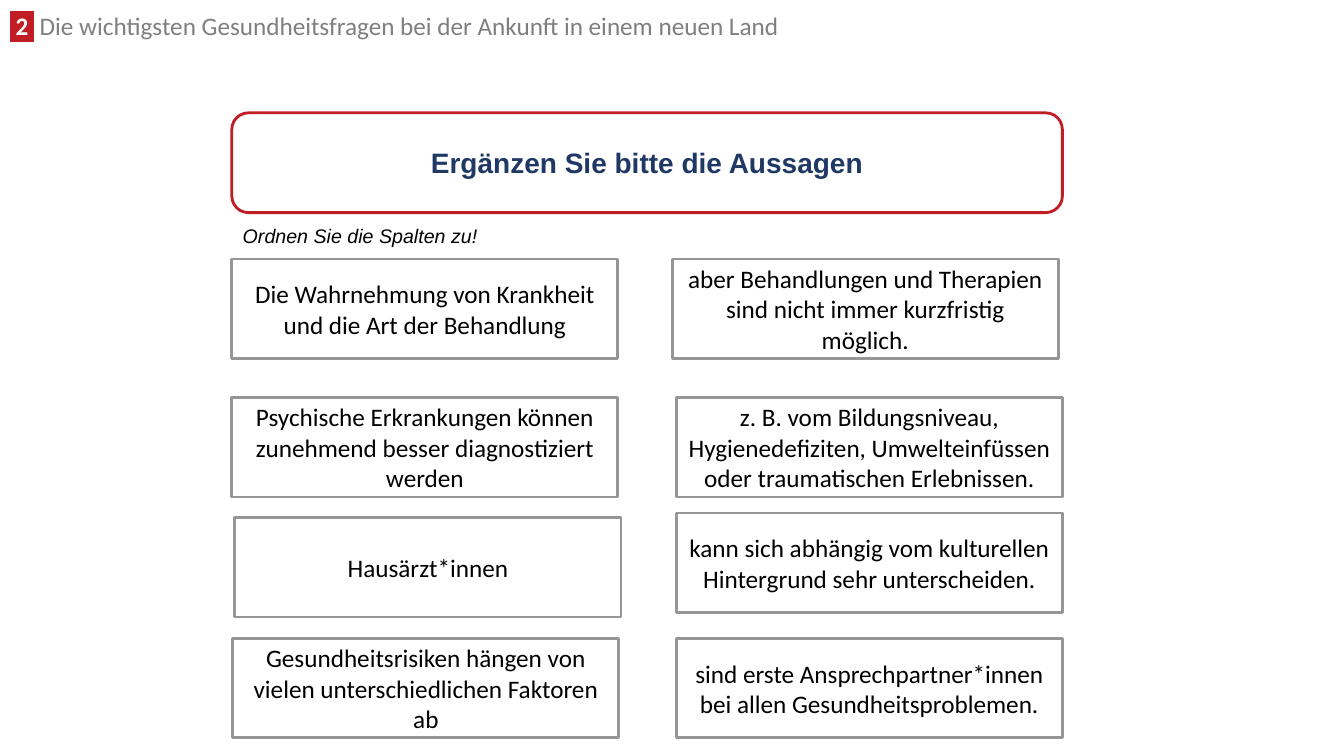
from dataclasses import dataclass

from lxml.etree import SubElement
from pptx import Presentation
from pptx.dml.color import RGBColor as Rgb
from pptx.enum.shapes import MSO_SHAPE as Kind
from pptx.enum.text import MSO_ANCHOR as Anchor, PP_ALIGN as Align
from pptx.oxml.ns import qn
from pptx.shapes.autoshape import Shape
from pptx.slide import Slide
from pptx.util import Pt

HUES = {
    "white": "FFFFFF",
    "red": "C01E24",
    "gray": "7F7F7F",
    "edge": "969696",
    "navy": "203864",
    "black": "000000",
}


@dataclass
class Run:
    text: str
    size: float = 18
    font: str = "Calibri"
    hue: str = "black"
    bold: bool = False
    slant: bool = False
    mark: str = ""


@dataclass
class Box:
    left: float
    top: float
    run: Run
    wide: float = 275.8
    high: float = 71.3
    kind: Kind = Kind.RECTANGLE
    edge: str = "edge"


@dataclass
class Note:
    left: float
    top: float
    wide: float
    high: float
    runs: list[Run]
    wrap: bool = True
    space: float = 1.0


def paint(name: str) -> Rgb:
    return Rgb.from_string(HUES[name])


def write(shape: Shape, runs: list[Run]) -> None:
    para = shape.text_frame.paragraphs[0]
    for item in runs:
        run = para.add_run()
        run.text = item.text
        font = run.font
        font.size = Pt(item.size)
        font.name = item.font
        font.bold = item.bold
        font.italic = item.slant
        font.color.rgb = paint(item.hue)
        if item.mark:
            props = run._r.get_or_add_rPr()
            mark = SubElement(props, qn("a:highlight"))
            SubElement(mark, qn("a:srgbClr"), val=HUES[item.mark])
            props.find(qn("a:solidFill")).addnext(mark)


def draw_box(slide: Slide, box: Box) -> None:
    shape = slide.shapes.add_shape(
        box.kind, Pt(box.left), Pt(box.top), Pt(box.wide), Pt(box.high)
    )
    shape.shadow.inherit = False
    shape.fill.solid()
    shape.fill.fore_color.rgb = paint("white")
    shape.line.color.rgb = paint(box.edge)
    shape.line.width = Pt(2)
    frame = shape.text_frame
    frame.word_wrap = True
    frame.vertical_anchor = Anchor.MIDDLE
    frame.paragraphs[0].alignment = Align.CENTER
    write(shape, [box.run])


def draw_note(slide: Slide, note: Note) -> None:
    shape = slide.shapes.add_textbox(
        Pt(note.left), Pt(note.top), Pt(note.wide), Pt(note.high)
    )
    frame = shape.text_frame
    frame.word_wrap = note.wrap
    frame.paragraphs[0].line_spacing = note.space
    write(shape, note.runs)


TITLE = "Die wichtigsten Gesundheitsfragen bei der Ankunft in einem neuen Land"
NOTES = [
    Note(0, 7.9, 617, 24.5, [
        Run(" 2 ", hue="white", bold=True, mark="red"),
        Run(f" {TITLE}", hue="gray"),
    ], space=0.8),
    Note(166.3, 156.2, 182.9, 24.5, [
        Run("Ordnen Sie die Spalten zu!", 14, "Arial", slant=True),
    ], wrap=False),
]

HEAD = Box(
    165.6, 80.6,
    Run("Ergänzen Sie bitte die Aussagen", 20, "Arial", "navy", bold=True),
    593.3, kind=Kind.ROUNDED_RECTANGLE, edge="red",
)

CARDS = [
    Box(165.6, 185, Run("Die Wahrnehmung von Krankheit und die Art der Behandlung")),
    Box(165.6, 283.7, Run("Psychische Erkrankungen können zunehmend besser diagnostiziert werden")),
    Box(167.8, 369.4, Run("Hausärzt*innen")),
    Box(166.3, 455.8, Run("Gesundheitsrisiken hängen von vielen unterschiedlichen Faktoren ab")),
    Box(480.2, 185, Run("aber Behandlungen und Therapien sind nicht immer kurzfristig möglich.")),
    Box(483.1, 283.7, Run("z. B. vom Bildungsniveau, Hygienedefiziten, Umwelteinfüssen oder traumatischen Erlebnissen.")),
    Box(483.1, 366.5, Run("kann sich abhängig vom kulturellen Hintergrund sehr unterscheiden.")),
    Box(483.1, 455.8, Run("sind erste Ansprechpartner*innen bei allen Gesundheitsproblemen.")),
]


def main() -> None:
    deck = Presentation()
    deck.slide_width, deck.slide_height = Pt(960), Pt(540)
    slide = deck.slides.add_slide(deck.slide_layouts[6])
    for note in NOTES:
        draw_note(slide, note)
    for box in [HEAD, *CARDS]:
        draw_box(slide, box)
    deck.save("out.pptx")


if __name__ == "__main__":
    main()
